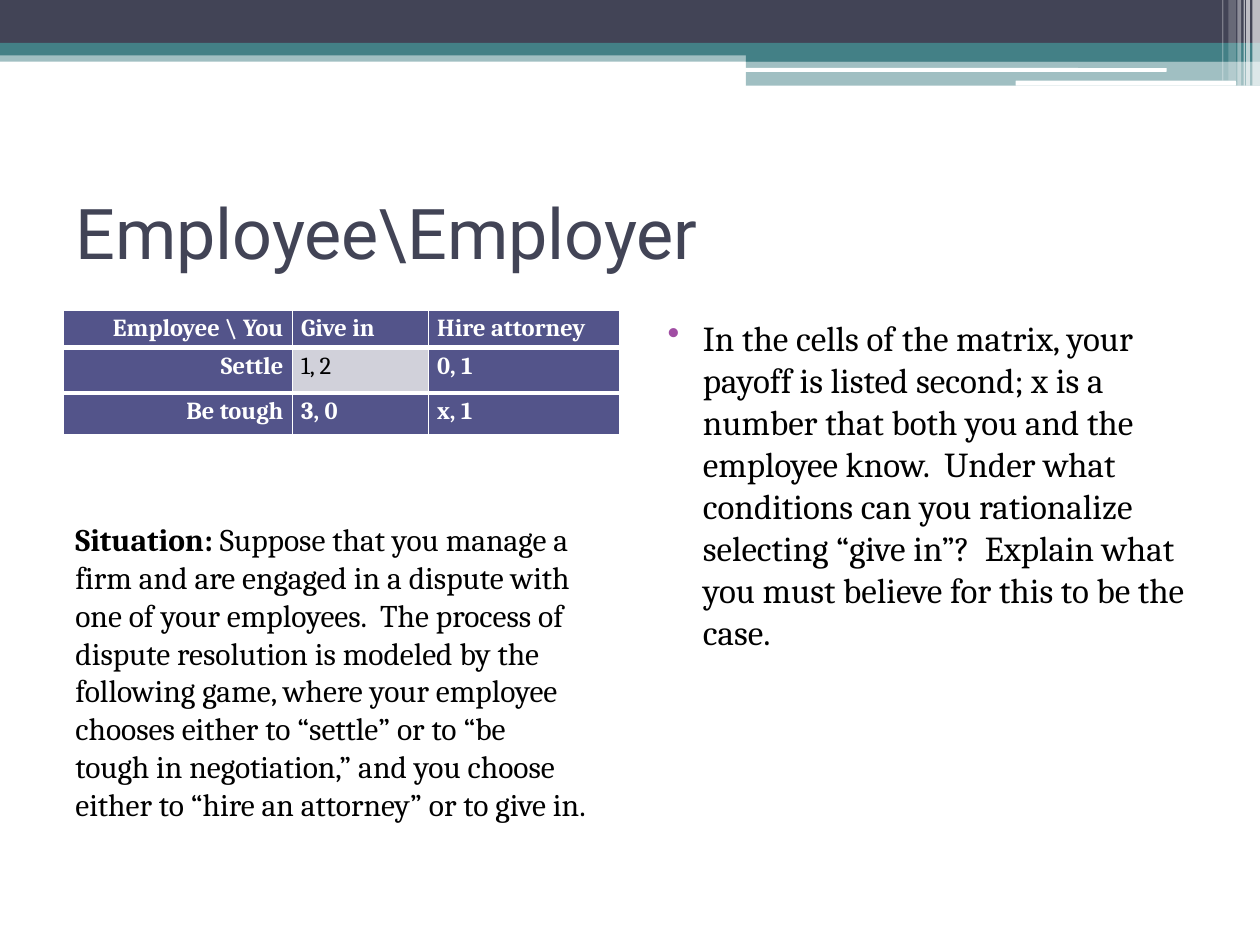
from dataclasses import dataclass

from lxml import etree
from pptx import Presentation
from pptx.dml.color import RGBColor
from pptx.enum.shapes import MSO_SHAPE
from pptx.enum.text import MSO_ANCHOR, PP_ALIGN
from pptx.oxml.ns import qn
from pptx.util import Inches, Pt

RECT, ROUND = MSO_SHAPE.RECTANGLE, MSO_SHAPE.ROUNDED_RECTANGLE
MIDDLE, TOP = MSO_ANCHOR.MIDDLE, MSO_ANCHOR.TOP
LEFT, RIGHT = PP_ALIGN.LEFT, PP_ALIGN.RIGHT


@dataclass(frozen=True)
class Theme:
    heading: str = "Roboto"
    body: str = "Cambria"
    title_size: int = 40
    question_size: int = 20
    situation_size: int = 18
    table_size: int = 14
    navy: str = "424456"
    teal: str = "438086"
    white: str = "FFFFFF"
    black: str = "000000"
    purple: str = "53548A"
    pale: str = "D1D1DA"
    bullet: str = "A04DA3"


T = Theme()

TITLE = "Employee\\Employer"
QUESTION = (
    "In the cells of the matrix, your payoff is listed second; x is a number that both "
    "you and the employee know.  Under what conditions can you rationalize selecting "
    "“give in”?  Explain what you must believe for this to be the case."
)
SITUATION = [
    ("Situation: ", True),
    ("Suppose that you manage a firm and are engaged in a dispute with one of your "
     "employees.  The process of dispute resolution is modeled by the following game, "
     "where your employee chooses either to “settle” or to “be tough in negotiation,” "
     "and you choose either to “hire an attorney” or to give in.", False),
]
PAYOFFS = [
    ("Employee \\ You", "Give in", "Hire attorney"),
    ("Settle", "1, 2", "0, 1"),
    ("Be tough", "3, 0", "x, 1"),
]
PLAIN_CELL = (1, 1)
COL_WIDTHS = (1.82, 1.08, 1.52)
ROW_HEIGHTS = (0.3, 0.36, 0.33)

BANDS = [
    (RECT, (0, 0.4, 10, 0.09), T.teal, 50),
    (RECT, (0, 0, 10, 0.34), T.navy, 100),
    (RECT, (0, 0.34, 10, 0.1), T.teal, 100),
    (RECT, (5.92, 0.39, 4.08, 0.1), T.teal, 100),
    (RECT, (5.92, 0.48, 4.08, 0.2), T.teal, 50),
    (ROUND, (5.91, 0.54, 3.35, 0.03), T.white, 100),
    (ROUND, (8.06, 0.64, 1.75, 0.04), T.white, 100),
]
STRIPES = [
    (9.94, 0.06, 0.68, 65),
    (9.89, 0.03, 0.68, 65),
    (9.87, 0.01, 0.68, 60),
    (9.82, 0.03, 0.68, 40),
    (9.75, 0.06, 0.64, 20),
    (9.7, 0.01, 0.64, 30),
]


def rgb(color):
    return RGBColor.from_string(color)


def set_font(font, name, size, color, bold=False):
    font.name, font.size, font.bold = name, Pt(size), bold
    font.color.rgb = rgb(color)


def add_band(slide, kind, box, color, opacity):
    sp = slide.shapes.add_shape(kind, *map(Inches, box))
    sp.shadow.inherit = False
    sp.line.fill.background()
    sp.fill.solid()
    sp.fill.fore_color.rgb = rgb(color)
    if opacity < 100:
        clr = sp.fill._xPr.find(".//" + qn("a:srgbClr"))
        etree.SubElement(clr, qn("a:alpha"), val=str(opacity * 1000))


def add_text(slide, box, runs, name, size, color, anchor=TOP):
    tf = slide.shapes.add_textbox(*map(Inches, box)).text_frame
    tf.word_wrap = True
    tf.vertical_anchor = anchor
    p = tf.paragraphs[0]
    set_font(p.font, name, size, color)
    for text, bold in runs:
        r = p.add_run()
        r.text = text
        set_font(r.font, name, size, color, bold)
    return p


def add_bullet(p, color, left, indent):
    p_pr = p._p.get_or_add_pPr()
    p_pr.set("marL", str(Inches(left)))
    p_pr.set("indent", str(Inches(indent)))
    bu_clr = etree.Element(qn("a:buClr"))
    etree.SubElement(bu_clr, qn("a:srgbClr"), val=color)
    bu_char = etree.Element(qn("a:buChar"), char="•")
    p_pr.find(qn("a:defRPr")).addprevious(bu_clr)
    bu_clr.addnext(bu_char)


def set_borders(cell, widths):
    tc_pr = cell._tc.get_or_add_tcPr()
    for i, (side, width) in enumerate(widths.items()):
        ln = etree.Element(qn("a:ln" + side), w=str(Pt(width)))
        fill = etree.SubElement(ln, qn("a:solidFill"))
        etree.SubElement(fill, qn("a:srgbClr"), val=T.white)
        tc_pr.insert(i, ln)


def add_payoff_table(slide, left, top):
    box = (left, top, sum(COL_WIDTHS), sum(ROW_HEIGHTS))
    table = slide.shapes.add_table(
        len(PAYOFFS), len(COL_WIDTHS), *map(Inches, box)).table
    for col, width in zip(table.columns, COL_WIDTHS):
        col.width = Inches(width)
    last = len(PAYOFFS) - 1
    for i, (values, height) in enumerate(zip(PAYOFFS, ROW_HEIGHTS)):
        table.rows[i].height = Inches(height)
        for j, text in enumerate(values):
            plain = (i, j) == PLAIN_CELL
            cell = table.cell(i, j)
            cell.margin_left = cell.margin_right = Inches(0.07)
            cell.margin_top = cell.margin_bottom = 0
            cell.fill.solid()
            cell.fill.fore_color.rgb = rgb(T.pale if plain else T.purple)
            p = cell.text_frame.paragraphs[0]
            p.text = text
            p.alignment = RIGHT if j == 0 else LEFT
            p.line_spacing = 1.15
            set_font(p.runs[0].font, T.body, T.table_size,
                     T.black if plain else T.white, not plain)
            set_borders(cell, {"L": 1, "R": 1, "T": 3 if i else 1,
                               "B": 3 if i < last else 1})


def main():
    prs = Presentation()
    prs.slide_width, prs.slide_height = Inches(10), Inches(7.5)
    slide = prs.slides.add_slide(prs.slide_layouts[6])
    for band in BANDS:
        add_band(slide, *band)
    for left, width, height, opacity in STRIPES:
        add_band(slide, RECT, (left, 0, width, height), T.white, opacity)
    add_text(slide, (0.5, 1.25, 9, 1.17), [(TITLE, False)],
             T.heading, T.title_size, T.navy, MIDDLE)
    add_payoff_table(slide, 0.5, 2.46)
    p = add_text(slide, (5.08, 2.46, 4.42, 3.04), [(QUESTION, False)],
                 T.body, T.question_size, T.black)
    p.space_before = Pt(3)
    add_bullet(p, T.bullet, 0.4, -0.28)
    add_text(slide, (0.5, 4.08, 4.25, 2.83), SITUATION,
             T.body, T.situation_size, T.black)
    prs.save("out.pptx")


if __name__ == "__main__":
    main()
